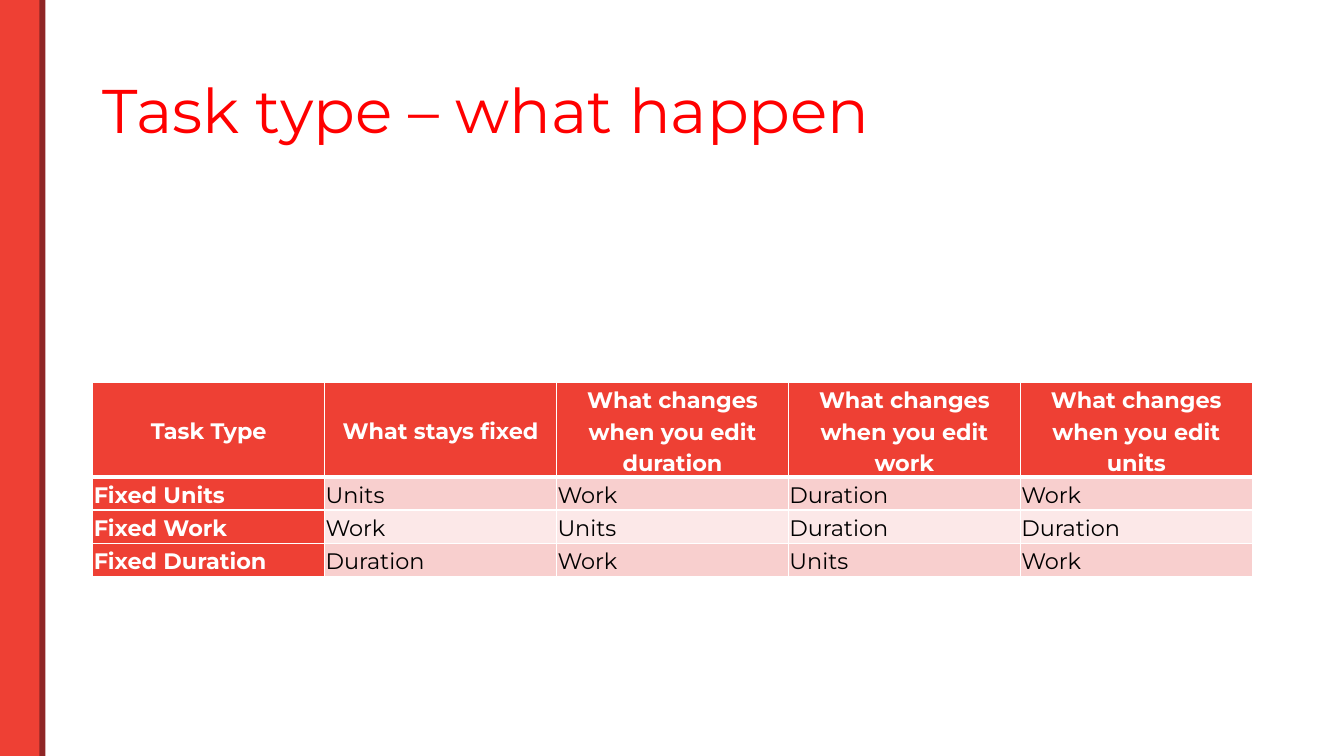
from lxml.etree import SubElement
from pptx import Presentation
from pptx.dml.color import RGBColor
from pptx.enum.shapes import MSO_SHAPE
from pptx.enum.text import MSO_ANCHOR, PP_ALIGN
from pptx.oxml.ns import qn
from pptx.util import Pt

PX = 9144
WIDTH, HEIGHT = 1333, 750
RED, DARK_RED, TITLE_RED = "EE4034", "8F2626", "FF0000"
BANDS = ["F8CFCE", "FCE8E8"]
WHITE, BLACK = "FFFFFF", "000000"
FONT = "Montserrat"

TASK_TYPES = [
    ["Task Type", "What stays fixed", "What changes when you edit duration",
     "What changes when you edit work", "What changes when you edit units"],
    ["Fixed Units", "Units", "Work", "Duration", "Work"],
    ["Fixed Work", "Work", "Units", "Duration", "Duration"],
    ["Fixed Duration", "Duration", "Work", "Units", "Work"],
]
HEADER_HEIGHT, ROW_HEIGHT = 94, 33


def px(*lengths):
    return [length * PX for length in lengths]


def color(value):
    return RGBColor.from_string(value)


def set_attrs(target, values):
    for name, value in values.items():
        setattr(target, name, value)


def write(tf, text, font_color, paragraph, font):
    p = tf.paragraphs[0]
    set_attrs(p, paragraph)
    r = p.add_run()
    r.text = text
    set_attrs(r.font, {"name": FONT, **font})
    r.font.color.rgb = color(font_color)


def add_side_bar(s, left, top, width, height):
    edge = 5
    main = width - edge
    strips = [(0, main, RED), (main, edge, DARK_RED), (main - 1, edge, DARK_RED)]
    for offset, strip_width, fill in strips:
        sp = s.shapes.add_shape(MSO_SHAPE.RECTANGLE,
                                *px(left + offset, top, strip_width, height))
        sp.shadow.inherit = False
        sp.fill.solid()
        sp.fill.fore_color.rgb = color(fill)
        sp.line.fill.background()


def add_title(s, left, top, width, height):
    tf = s.shapes.add_textbox(*px(left, top, width, height)).text_frame
    set_attrs(tf, {"word_wrap": True, "vertical_anchor": MSO_ANCHOR.MIDDLE})
    write(tf, "Task type – what happen", TITLE_RED,
          {"line_spacing": 0.9}, {"size": Pt(44)})


def add_borders(cell, widths):
    tc_pr = cell._tc.get_or_add_tcPr()
    for index, (side, width) in enumerate(widths.items()):
        ln = SubElement(tc_pr, qn(f"a:ln{side}"), w=str(Pt(width)))
        tc_pr.insert(index, ln)
        fill = SubElement(ln, qn("a:solidFill"))
        SubElement(fill, qn("a:srgbClr"), val=WHITE)


def add_task_table(s, left, top, width):
    heights = [HEADER_HEIGHT] + [ROW_HEIGHT] * (len(TASK_TYPES) - 1)
    columns = len(TASK_TYPES[0])
    table = s.shapes.add_table(len(heights), columns,
                               *px(left, top, width, sum(heights))).table
    table.first_col = True
    for column in table.columns:
        column.width = width * PX // columns
    for row, (texts, height) in enumerate(zip(TASK_TYPES, heights)):
        table.rows[row].height = height * PX
        for col, text in enumerate(texts):
            header = row == 0
            strong = header or col == 0
            cell = table.cell(row, col)
            set_attrs(cell, {f"margin_{side}": PX
                             for side in ("left", "top", "right", "bottom")})
            cell.vertical_anchor = MSO_ANCHOR.MIDDLE
            cell.fill.solid()
            cell.fill.fore_color.rgb = color(RED if strong else BANDS[(row - 1) % 2])
            add_borders(cell, {"L": 1, "R": 1, "T": 3 if row == 1 else 1,
                               "B": 3 if header else 1})
            write(cell.text_frame, text, WHITE if strong else BLACK,
                  {"alignment": PP_ALIGN.CENTER if header else PP_ALIGN.LEFT,
                   "line_spacing": 1.15, "space_after": Pt(8)},
                  {"size": Pt(16), "bold": strong})


def main():
    prs = Presentation()
    prs.slide_width, prs.slide_height = px(WIDTH, HEIGHT)
    s = prs.slides.add_slide(prs.slide_layouts[6])
    add_side_bar(s, 0, 0, 45, HEIGHT)
    add_title(s, 92, 40, 1150, 145)
    add_task_table(s, 92, 379, 1150)
    prs.save("out.pptx")


if __name__ == "__main__":
    main()
